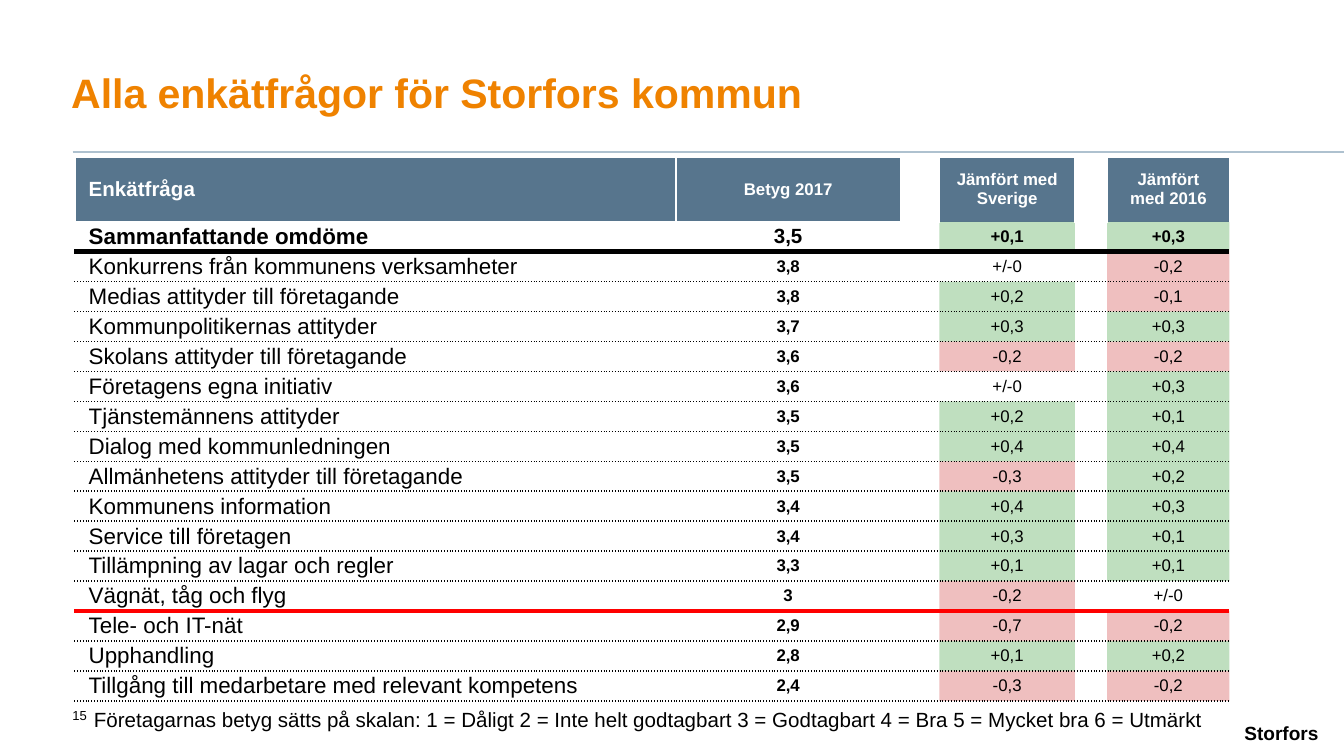
from lxml.etree import SubElement
from pptx import Presentation
from pptx.dml.color import RGBColor
from pptx.enum.shapes import MSO_CONNECTOR
from pptx.enum.text import MSO_ANCHOR as Anchor, PP_ALIGN as Align
from pptx.oxml.ns import qn
from pptx.util import Inches, Pt

FONT = "Arial"
COLORS = {
    "orange": "EF8200", "header": "57758D", "rule": "AEC1CF", "black": "000000",
    "white": "FFFFFF", "better": "008000", "worse": "C00000", "red": "FF0000",
}
TITLE = "Alla enkätfrågor för Storfors kommun"
MUNICIPALITY = "Storfors"
PAGE_NUMBER = "15"
SCALE_NOTE = ("Företagarnas betyg sätts på skalan: 1 = Dåligt 2 = Inte helt godtagbart "
              "3 = Godtagbart 4 = Bra 5 = Mycket bra 6 = Utmärkt")

HEADERS = ("Enkätfråga", "Betyg 2017", "Jämfört med Sverige", "Jämfört med 2016")
SUMMARY = "Sammanfattande omdöme"
LAST_ABOVE_LIMIT = "Vägnät, tåg och flyg"
RESULTS = [
    (SUMMARY, "3,5", "+0,1", "+0,3"),
    ("Konkurrens från kommunens verksamheter", "3,8", "+/-0", "-0,2"),
    ("Medias attityder till företagande", "3,8", "+0,2", "-0,1"),
    ("Kommunpolitikernas attityder", "3,7", "+0,3", "+0,3"),
    ("Skolans attityder till företagande", "3,6", "-0,2", "-0,2"),
    ("Företagens egna initiativ", "3,6", "+/-0", "+0,3"),
    ("Tjänstemännens attityder", "3,5", "+0,2", "+0,1"),
    ("Dialog med kommunledningen", "3,5", "+0,4", "+0,4"),
    ("Allmänhetens attityder till företagande", "3,5", "-0,3", "+0,2"),
    ("Kommunens information", "3,4", "+0,4", "+0,3"),
    ("Service till företagen", "3,4", "+0,3", "+0,1"),
    ("Tillämpning av lagar och regler", "3,3", "+0,1", "+0,1"),
    (LAST_ABOVE_LIMIT, "3", "-0,2", "+/-0"),
    ("Tele- och IT-nät", "2,9", "-0,7", "-0,2"),
    ("Upphandling", "2,8", "+0,1", "+0,2"),
    ("Tillgång till medarbetare med relevant kompetens", "2,4", "-0,3", "-0,2"),
]

COLUMN_WIDTHS = (4.47, 1.67, 0.29, 1.01, 0.23, 0.91)
QUESTION, GRADE = 0, 1
TEXT_COLUMNS = (QUESTION, GRADE, 3, 5)  # the other columns are gaps
TABLE_LEFT, TABLE_TOP, TABLE_HEIGHT, HEADER_HEIGHT = 0.56, 1.17, 4.05, 0.48

# Border styles: colour, width in points, dash
THIN = ("white", 1, "solid")
DOTTED = ("black", 1, "sysDot")
THICK = ("black", 3, "solid")
LIMIT = ("red", 2, "solid")


def rgb(name):
    return RGBColor.from_string(COLORS[name])


def format_paragraph(paragraph, size, color="black", bold=False, align=Align.LEFT):
    paragraph.alignment = align
    font = paragraph.font
    font.name, font.size, font.bold = FONT, Pt(size), bold
    font.color.rgb = rgb(color)


def fill_frame(frame, text, anchor, margins, **style):
    """Margins are left, top, right and bottom in inches."""
    frame.word_wrap = True
    frame.vertical_anchor = anchor
    (frame.margin_left, frame.margin_top,
     frame.margin_right, frame.margin_bottom) = map(Inches, margins)
    frame.text = text
    format_paragraph(frame.paragraphs[0], **style)


def add_text(slide, box, text, anchor, margins, **style):
    shape = slide.shapes.add_textbox(*map(Inches, box))
    fill_frame(shape.text_frame, text, anchor, margins, **style)


def set_borders(cell, borders):
    """Draw all four sides; a side that is not in borders gets no line."""
    properties = cell._tc.get_or_add_tcPr()
    for side in "LRTB":
        if side not in borders:
            SubElement(SubElement(properties, qn(f"a:ln{side}"), w="0"), qn("a:noFill"))
            continue
        color, width, dash = borders[side]
        line = SubElement(properties, qn(f"a:ln{side}"), w=str(Pt(width)))
        SubElement(SubElement(line, qn("a:solidFill")), qn("a:srgbClr"), val=COLORS[color])
        SubElement(line, qn("a:prstDash"), val=dash)


def set_fill(cell, color, opacity=100):
    cell.fill.solid()
    cell.fill.fore_color.rgb = rgb(color)
    if opacity < 100:
        color_element = cell._tc.tcPr.find(f"{qn('a:solidFill')}/{qn('a:srgbClr')}")
        SubElement(color_element, qn("a:alpha"), val=str(opacity * 1000))


def set_cell_text(cell, text, **style):
    cell.margin_top = cell.margin_bottom = 0
    cell.vertical_anchor = Anchor.MIDDLE
    cell.text = text
    paragraph = cell.text_frame.paragraphs[0]
    format_paragraph(paragraph, **style)
    if not text:  # keeps an empty cell from stretching its row
        SubElement(paragraph._p, qn("a:endParaRPr"), sz=str(style["size"] * 100))


def change_color(change):
    if change == "+/-0":
        return "white"
    return "better" if change.startswith("+") else "worse"


def row_line(question):
    return {SUMMARY: THICK, LAST_ABOVE_LIMIT: LIMIT}.get(question, DOTTED)


def add_header(table):
    labels = dict(zip(TEXT_COLUMNS, HEADERS))
    for column in range(len(COLUMN_WIDTHS)):
        cell = table.cell(0, column)
        is_change = column in TEXT_COLUMNS[2:]
        set_borders(cell, dict.fromkeys("LRT" if is_change else "LRTB", THIN))
        set_fill(cell, "header" if column in labels else "white")
        set_cell_text(cell, labels.get(column, ""), color="white", bold=True,
                      size=11 if column == QUESTION else 9,
                      align=Align.LEFT if column == QUESTION else Align.CENTER)


def add_result(table, row, result, line_above):
    texts = dict(zip(TEXT_COLUMNS, result))
    is_summary = result[0] == SUMMARY
    for column in range(len(COLUMN_WIDTHS)):
        cell = table.cell(row, column)
        text = texts.get(column, "")
        is_change = column in TEXT_COLUMNS[2:]
        borders = {"B": row_line(result[0])}
        if not (is_summary and is_change):
            borders["T"] = line_above
        if column in (QUESTION, GRADE):
            borders.update(L=THIN, R=THIN)
        set_borders(cell, borders)
        if is_change:
            set_fill(cell, change_color(text), opacity=25)
        else:
            set_fill(cell, "white")
        size = 12 if column == QUESTION else 11 if is_summary and column == GRADE else 9
        set_cell_text(cell, text, size=size, bold=is_summary or column == GRADE,
                      align=Align.LEFT if column == QUESTION else Align.CENTER)


def add_results_table(slide):
    table = slide.shapes.add_table(
        len(RESULTS) + 1, len(COLUMN_WIDTHS), Inches(TABLE_LEFT), Inches(TABLE_TOP),
        Inches(sum(COLUMN_WIDTHS)), Inches(TABLE_HEIGHT)).table
    table.first_row = table.horz_banding = False
    for column, width in zip(table.columns, COLUMN_WIDTHS):
        column.width = Inches(width)
    for row in table.rows:
        row.height = Inches((TABLE_HEIGHT - HEADER_HEIGHT) / len(RESULTS))
    table.rows[0].height = Inches(HEADER_HEIGHT)

    add_header(table)
    line_above = THIN
    for row, result in enumerate(RESULTS, start=1):
        add_result(table, row, result, line_above)
        line_above = row_line(result[0])


def main():
    presentation = Presentation()
    presentation.slide_width = Inches(10)
    presentation.slide_height = Inches(10 * 9 / 16)
    slide = presentation.slides.add_slide(presentation.slide_layouts[5])

    rule = slide.shapes.add_connector(MSO_CONNECTOR.STRAIGHT, Inches(0.54), Inches(1.13),
                                      Inches(10), Inches(1.13))
    rule.line.color.rgb = rgb("rule")
    rule.line.width = Pt(1)
    SubElement(rule._element.spPr, qn("a:effectLst"))

    title = slide.shapes.title
    title.left, title.top, title.width, title.height = map(Inches, (0.53, 0.15, 7.47, 0.76))
    fill_frame(title.text_frame, TITLE, Anchor.BOTTOM, (0, 0, 0, 0.04),
               size=22, color="orange", bold=True)

    add_text(slide, (5.18, 5.24, 4.63, 0.3), MUNICIPALITY, Anchor.BOTTOM, (0, 0, 0, 0),
             size=10.2, bold=True, align=Align.RIGHT)
    add_text(slide, (0.44, 5.26, 0.34, 0.13), PAGE_NUMBER, Anchor.MIDDLE,
             (0.1, 0, 0.1, 0), size=7)
    add_text(slide, (0.6, 5.21, 8.52, 0.29), SCALE_NOTE, Anchor.TOP,
             (0.1, 0.05, 0.1, 0.05), size=11)
    add_results_table(slide)
    presentation.save("out.pptx")


if __name__ == "__main__":
    main()
